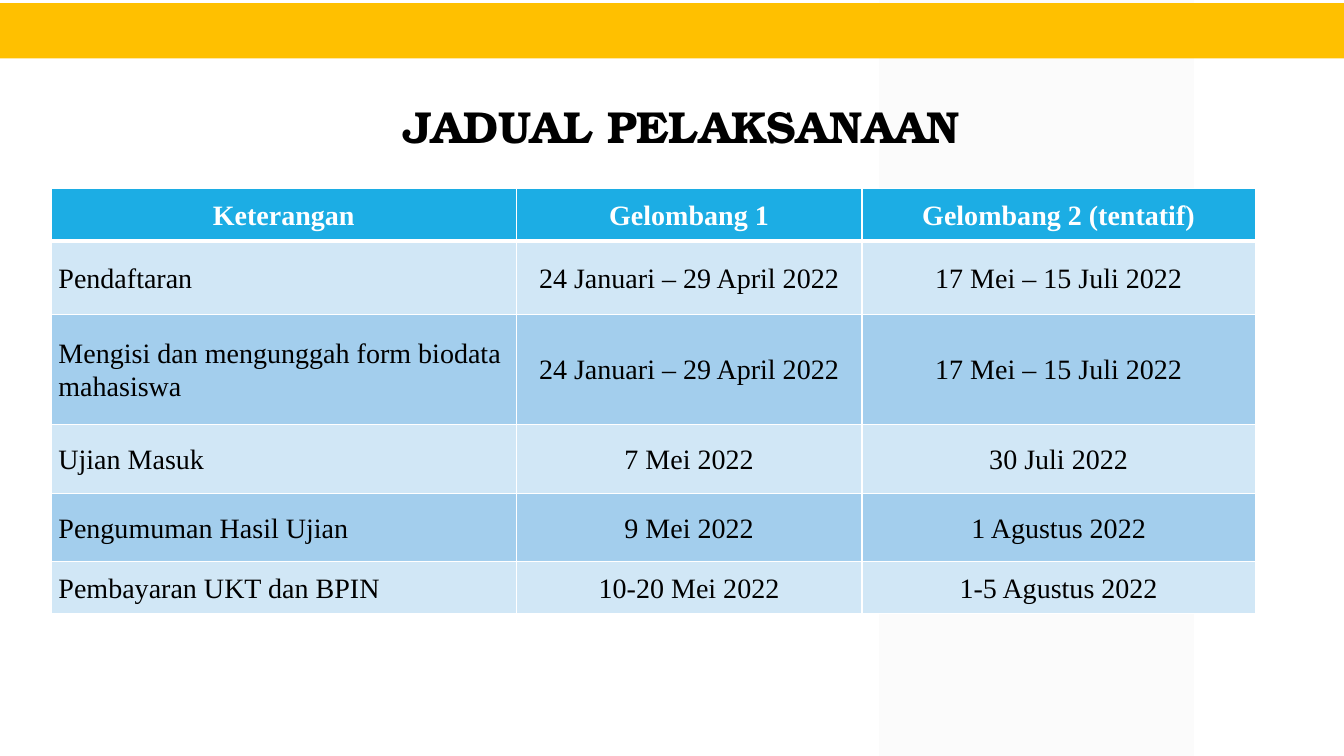
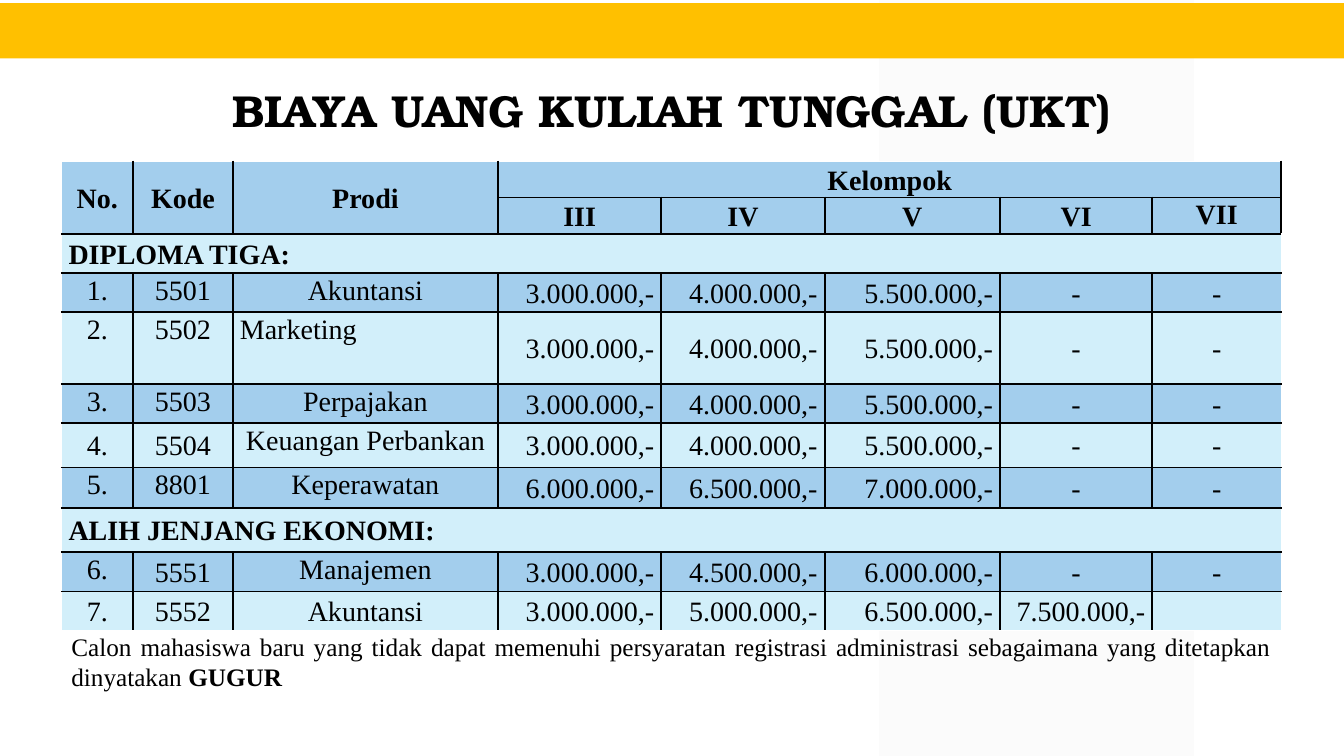
import pptx
import pptx.util
import pptx.dml.color
import pptx.enum.shapes
import pptx.enum.text
import pptx.oxml
import pptx.oxml.ns

Inches = pptx.util.Inches
Pt = pptx.util.Pt
RGB = pptx.dml.color.RGBColor
ALIGN = pptx.enum.text.PP_ALIGN
ANCHOR = pptx.enum.text.MSO_ANCHOR

BLACK = RGB(0x00, 0x00, 0x00)
WHITE = RGB(0xFF, 0xFF, 0xFF)
GOLD = RGB(0xFF, 0xC0, 0x00)
STRIPE_GREY = RGB(0xF2, 0xF2, 0xF2)
HEADER_BLUE = RGB(0x1C, 0xAD, 0xE4)
MID_BLUE = RGB(0xA3, 0xCE, 0xED)
PALE_BLUE = RGB(0xD1, 0xE7, 0xF6)
PALE_CYAN = RGB(0xD2, 0xEF, 0xFA)

TITLE_FONT = "TeX Gyre Bonum"
BODY_FONT = "Times New Roman"

SCHEDULE_HEADS = ["Keterangan", "Gelombang 1", "Gelombang 2 (tentatif)"]
SCHEDULE = [
    ("Pendaftaran", "24 Januari – 29 April 2022", "17 Mei – 15 Juli 2022"),
    ("Mengisi dan mengunggah form biodata mahasiswa",
     "24 Januari – 29 April 2022", "17 Mei – 15 Juli 2022"),
    ("Ujian Masuk", "7 Mei 2022", "30 Juli 2022"),
    ("Pengumuman Hasil Ujian", "9 Mei 2022", "1 Agustus 2022"),
    ("Pembayaran UKT dan BPIN", "10-20 Mei 2022", "1-5 Agustus 2022"),
]

# Fee rows: a lone string is a section heading; the last item of a
# programme gives the anchors of its first three cells (t top, m middle).
FEES = [
    "DIPLOMA TIGA:",
    ("1.", "5501", "Akuntansi", "3.000.000,-", "4.000.000,-", "5.500.000,-", "-", "-", "ttt"),
    ("2.", "5502", "Marketing", "3.000.000,-", "4.000.000,-", "5.500.000,-", "-", "-", "ttt"),
    ("3.", "5503", "Perpajakan", "3.000.000,-", "4.000.000,-", "5.500.000,-", "-", "-", "ttt"),
    ("4.", "5504", "Keuangan Perbankan", "3.000.000,-", "4.000.000,-", "5.500.000,-",
     "-", "-", "mmt"),
    ("5.", "8801", "Keperawatan", "6.000.000,-", "6.500.000,-", "7.000.000,-", "-", "-", "ttt"),
    "ALIH JENJANG EKONOMI:",
    ("6.", "5551", "Manajemen", "3.000.000,-", "4.500.000,-", "6.000.000,-", "-", "-", "tmt"),
    ("7.", "5552", "Akuntansi", "3.000.000,-", "5.000.000,-", "6.500.000,-",
     "7.500.000,-", "", "mmm"),
]


def place(box):
    return [Inches(length) for length in box]


def add_bar(slide, box, color):
    bar = slide.shapes.add_shape(pptx.enum.shapes.MSO_SHAPE.RECTANGLE, *place(box))
    bar.shadow.inherit = False
    bar.fill.solid()
    bar.fill.fore_color.rgb = color
    bar.line.fill.background()
    return bar


def add_master_stripe(prs, slide):
    """Draw the pale stripe and move it behind everything on the master."""
    stripe = add_bar(slide, (8.72, 0, 3.12, 7.5), STRIPE_GREY)
    color = stripe.element.find(".//" + pptx.oxml.ns.qn("a:srgbClr"))
    color.append(pptx.oxml.parse_xml(
        f'<a:alpha {pptx.oxml.ns.nsdecls("a")} val="30000"/>'))
    prs.slide_master.shapes.element.insert(2, stripe.element)


def add_titled_slide(prs, title_text, title_box):
    slide = prs.slides.add_slide(prs.slide_layouts[5])
    add_bar(slide, (0, 0.03, 13.33, 0.55), GOLD)
    title = slide.shapes.title
    title.left, title.top, title.width, title.height = place(title_box)
    frame = title.text_frame
    frame.text = title_text
    frame.word_wrap = True
    frame.auto_size = pptx.enum.text.MSO_AUTO_SIZE.NONE
    frame.vertical_anchor = ANCHOR.MIDDLE
    frame.paragraphs[0].alignment = ALIGN.CENTER
    style_font(frame.paragraphs[0].runs[0].font, 32, True, BLACK, TITLE_FONT)
    return slide


def style_font(font, size, bold, color=BLACK, name=BODY_FONT):
    font.name = name
    font.size = Pt(size)
    font.bold = bold
    font.color.rgb = color


def add_grid(slide, corner, col_widths, row_heights):
    box = (*corner, sum(col_widths), sum(row_heights))
    grid = slide.shapes.add_table(len(row_heights), len(col_widths), *place(box)).table
    grid.first_row = grid.horz_banding = False
    for column, width in zip(grid.columns, col_widths):
        column.width = Inches(width)
    for row, height in zip(grid.rows, row_heights):
        row.height = Inches(height)
    return grid


def set_borders(cell, borders):
    """borders maps the sides L, R, T, B, in that order, to (colour, points)."""
    properties = cell._tc.get_or_add_tcPr()
    for side, (color, points) in borders.items():
        properties.append(pptx.oxml.parse_xml(
            f'<a:ln{side} {pptx.oxml.ns.nsdecls("a")} w="{Pt(points)}">'
            f'<a:solidFill><a:srgbClr val="{color}"/></a:solidFill></a:ln{side}>'))


def fill_cell(cell, text, fill, align=ALIGN.CENTER, bold=False, color=BLACK,
              anchor=ANCHOR.MIDDLE):
    cell.fill.solid()
    cell.fill.fore_color.rgb = fill
    cell.margin_left = cell.margin_right = Inches(0.07)
    cell.margin_top = cell.margin_bottom = 0
    cell.vertical_anchor = anchor
    cell.text_frame.text = text
    paragraph = cell.text_frame.paragraphs[0]
    paragraph.alignment = align
    paragraph.line_spacing = 1.07
    style_font(paragraph.font, 20, bold, color)
    for run in paragraph.runs:
        style_font(run.font, 20, bold, color)


def add_schedule_table(slide, corner):
    grid = add_grid(slide, corner, [4.61, 3.43, 3.9],
                    [0.52, 0.73, 1.09, 0.69, 0.67, 0.52])
    for r, texts in enumerate([SCHEDULE_HEADS] + SCHEDULE):
        for c, text in enumerate(texts):
            cell = grid.cell(r, c)
            borders = dict.fromkeys("LRTB", (WHITE, 1))
            if r == 0:
                borders["B"] = (WHITE, 3)
            elif r == 1:
                borders["T"] = (WHITE, 3)
            set_borders(cell, borders)
            if r == 0:
                fill_cell(cell, text, HEADER_BLUE, bold=True, color=WHITE)
            else:
                fill_cell(cell, text, PALE_BLUE if r % 2 else MID_BLUE,
                          ALIGN.CENTER if c else ALIGN.LEFT)


def rule_fee_table(grid, regions, last_row, last_col):
    """Black rules inside, white ones outside; merged regions stay undivided."""
    for r in range(last_row + 1):
        for c in range(last_col + 1):
            top, left, bottom, right = regions.get((r, c), (r, c, r, c))
            outer = {"L": left == 0, "R": right == last_col and top >= 2,
                     "T": top == 0, "B": bottom == last_row}
            on_edge = {"L": c == left, "R": c == right, "T": r == top, "B": r == bottom}
            is_origin = (r, c) == (top, left)
            set_borders(grid.cell(r, c), {
                side: (WHITE, 1) if outer[side] else (BLACK, 1.5)
                for side in "LRTB" if is_origin or on_edge[side]})


def add_fee_table(slide, corner):
    grid = add_grid(slide, corner, [0.71, 0.99, 2.63, 1.62, 1.62, 1.74, 1.51, 1.28],
                    [0.36, 0.36, 0.39, 0.39, 0.71, 0.39, 0.44, 0.4, 0.44, 0.39, 0.39])
    last_row, last_col = len(FEES) + 1, 7

    # Merged regions as top, left, bottom, right
    spans = [(0, c, 1, c) for c in range(3)] + [(0, 3, 0, last_col)]
    spans += [(r, 0, r, last_col) for r, fee in enumerate(FEES, 2) if isinstance(fee, str)]
    regions = {}
    for span in spans:
        top, left, bottom, right = span
        grid.cell(top, left).merge(grid.cell(bottom, right))
        for r in range(top, bottom + 1):
            for c in range(left, right + 1):
                regions[r, c] = span
    rule_fee_table(grid, regions, last_row, last_col)

    # Two header rows
    for c, text in enumerate(["No.", "Kode", "Prodi", "Kelompok"]):
        fill_cell(grid.cell(0, c), text, MID_BLUE, bold=True)
    for c, group in enumerate(["III", "IV", "V", "VI", "VII"], 3):
        fill_cell(grid.cell(1, c), group, MID_BLUE, bold=True,
                  anchor=ANCHOR.TOP if c == last_col else ANCHOR.MIDDLE)

    # Sections and programmes
    for r, fee in enumerate(FEES, 2):
        band = MID_BLUE if r % 2 else PALE_CYAN
        if isinstance(fee, str):
            fill_cell(grid.cell(r, 0), fee, band, ALIGN.JUSTIFY, bold=True)
            continue
        *texts, anchors = fee
        for c, text in enumerate(texts):
            align = ALIGN.RIGHT if text.endswith(",-") and c < 6 else ALIGN.CENTER
            if text == "Marketing":
                align = ALIGN.LEFT
            elif c == 6 and text != "-":
                align = ALIGN.RIGHT
            top = c < 3 and anchors[c] == "t"
            fill_cell(grid.cell(r, c), text, band, align,
                      anchor=ANCHOR.TOP if top else ANCHOR.MIDDLE)


def add_note(slide, box):
    frame = slide.shapes.add_textbox(*place(box)).text_frame
    frame.word_wrap = True
    paragraph = frame.paragraphs[0]
    paragraph.alignment = ALIGN.JUSTIFY
    pieces = [("Calon mahasiswa baru yang tidak dapat memenuhi persyaratan registrasi "
               "administrasi sebagaimana yang ditetapkan dinyatakan ", False),
              ("GUGUR", True)]
    for text, bold in pieces:
        run = paragraph.add_run()
        run.text = text
        style_font(run.font, 18, bold)


def main():
    prs = pptx.Presentation()
    prs.slide_width, prs.slide_height = Inches(13.33), Inches(7.5)

    schedule = add_titled_slide(prs, "JADUAL PELAKSANAAN", (3.48, 0.93, 6.57, 0.64))
    add_master_stripe(prs, schedule)
    add_schedule_table(schedule, (0.51, 1.87))

    fees = add_titled_slide(prs, "BIAYA UANG KULIAH TUNGGAL (UKT)", (0.4, 0.77, 12.53, 0.64))
    add_fee_table(fees, (0.61, 1.6))
    add_note(fees, (0.61, 6.21, 12.1, 0.71))

    prs.save("out.pptx")


if __name__ == "__main__":
    main()
